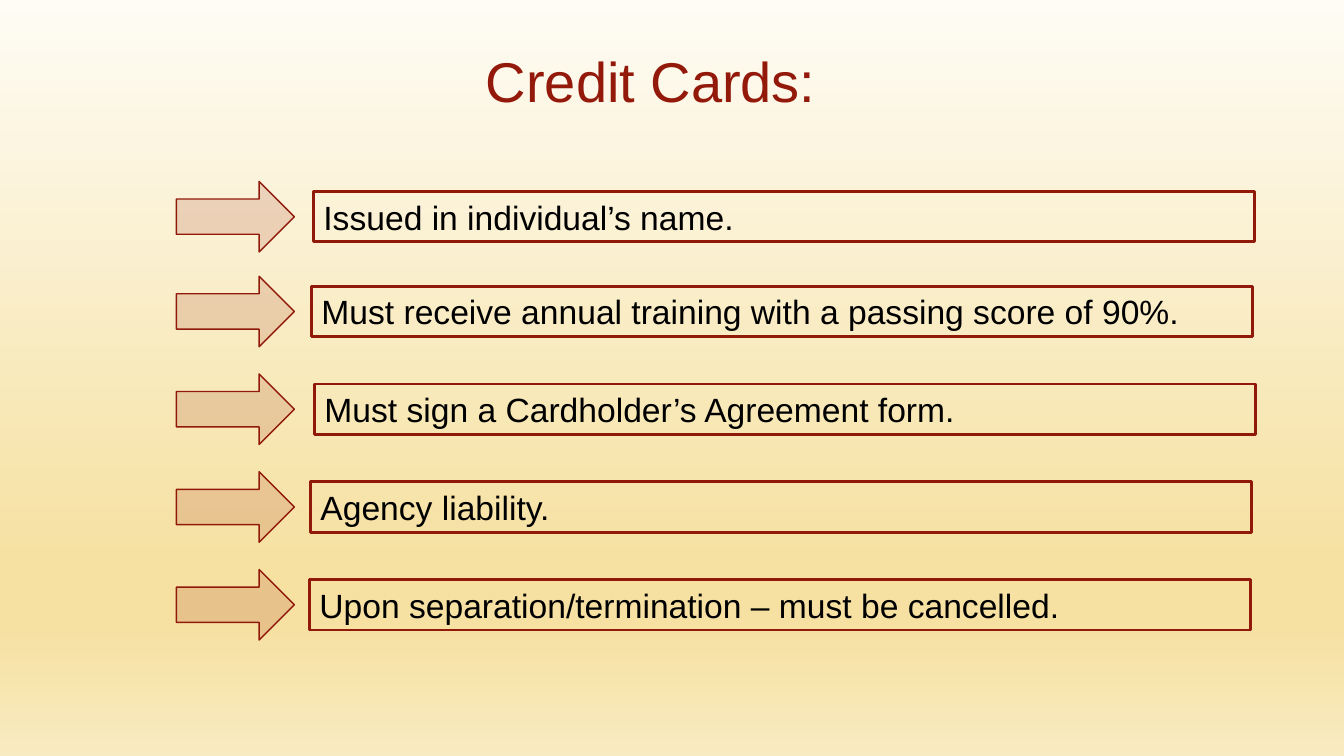
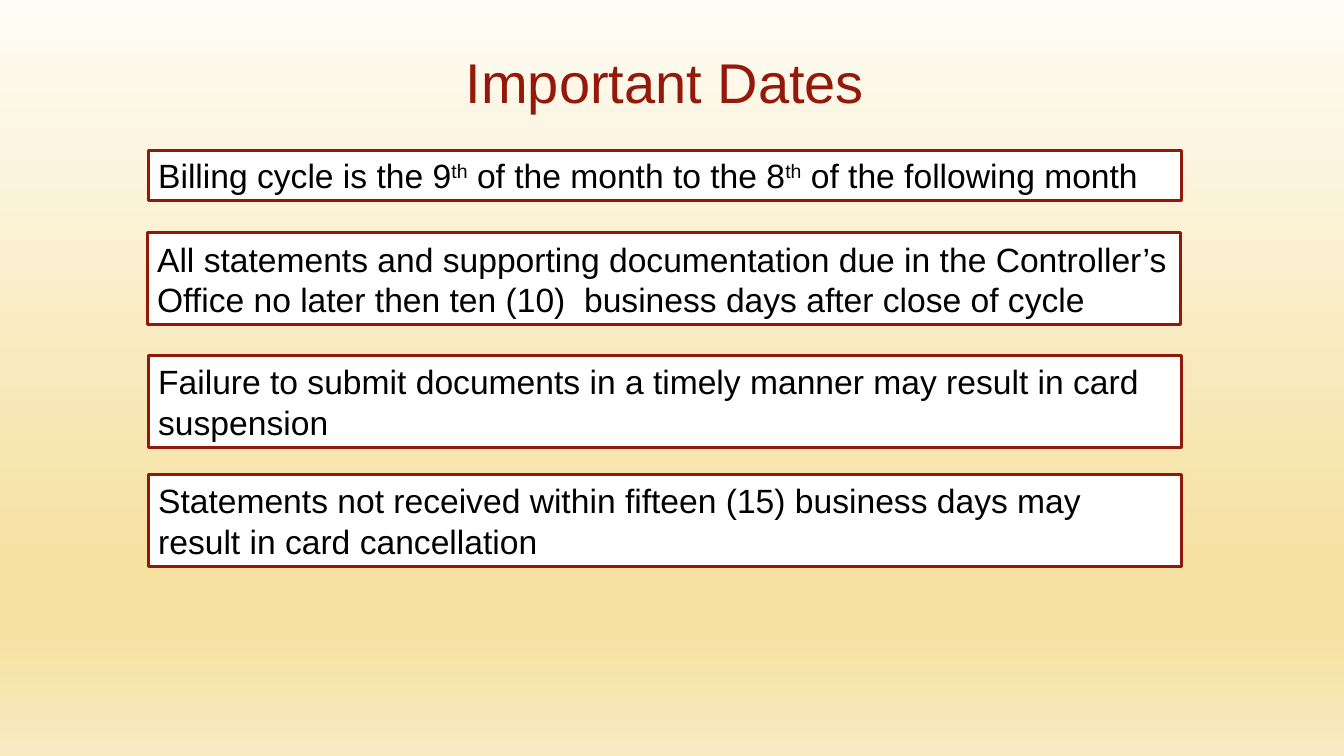
from lxml import etree
from pptx import Presentation
from pptx.dml.color import RGBColor
from pptx.enum import shapes, text
from pptx.oxml.ns import qn
from pptx.util import Inches, Pt


class Theme:
    font = "Arial"
    title_size = Pt(40)
    body_size = Pt(24)
    title = RGBColor.from_string("93190A")
    border = RGBColor.from_string("91190A")
    ink = RGBColor.from_string("000000")
    paper = RGBColor.from_string("FFFFFF")
    gradient = [(0, "FEFCF5"), (74, "F6E1A2"), (83, "F6E1A2"), (100, "F9EBC1")]
    arrow_opacity = 15


def add_titled_slide(title, left, top, width):
    s = prs.slides.add_slide(prs.slide_layouts[5])
    sp = s.shapes.title
    sp.left, sp.top = Inches(left), Inches(top)
    sp.width, sp.height = Inches(width), Inches(1.25)
    tf = sp.text_frame
    tf.auto_size = text.MSO_AUTO_SIZE.NONE
    tf.vertical_anchor = text.MSO_ANCHOR.MIDDLE
    p = tf.paragraphs[0]
    p.alignment = text.PP_ALIGN.CENTER
    p.line_spacing = 0.9
    r = p.add_run()
    r.text = title
    r.font.name, r.font.size = Theme.font, Theme.title_size
    r.font.color.rgb = Theme.title
    return s


def add_box(s, left, top, width, height, parts, fill=None):
    sp = s.shapes.add_shape(shapes.MSO_SHAPE.RECTANGLE, Inches(left), Inches(top),
                            Inches(width), Inches(height))
    sp.shadow.inherit = False
    if fill is None:
        sp.fill.background()
    else:
        sp.fill.solid()
        sp.fill.fore_color.rgb = fill
    sp.line.color.rgb, sp.line.width = Theme.border, Pt(2)
    tf = sp.text_frame
    tf.word_wrap = True
    tf.auto_size = text.MSO_AUTO_SIZE.SHAPE_TO_FIT_TEXT
    tf.vertical_anchor = text.MSO_ANCHOR.MIDDLE
    p = tf.paragraphs[0]
    p.alignment = text.PP_ALIGN.LEFT
    for part in parts:
        r = p.add_run()
        r.text = part
        r.font.name, r.font.size = Theme.font, Theme.body_size
        r.font.color.rgb = Theme.ink
        if part == "th":
            r.font._element.set("baseline", "30000")


prs = Presentation()
prs.slide_width, prs.slide_height = Inches(13.33), Inches(7.5)

master = prs.slide_master
fill = master.background.fill
fill.gradient()
fill.gradient_angle = 270
stops = master.element.find(".//" + qn("a:gsLst"))
for stop in list(stops):
    stops.remove(stop)
for position, color in Theme.gradient:
    stop = etree.SubElement(stops, qn("a:gs"), pos=str(position * 1000))
    etree.SubElement(stop, qn("a:srgbClr"), val=color)

s = add_titled_slide("Credit Cards:", 1.75, 0.21, 9.41)
card_rules = [
    (3.11, 1.8, "Issued in individual’s name."),
    (3.09, 2.74, "Must receive annual training with a passing score of 90%."),
    (3.12, 3.71, "Must sign a Cardholder’s Agreement form."),
    (3.08, 4.68, "Agency liability."),
    (3.07, 5.65, "Upon separation/termination – must be cancelled."),
]
for left, top, rule in card_rules:
    arrow = s.shapes.add_shape(shapes.MSO_SHAPE.RIGHT_ARROW, Inches(1.75), Inches(top),
                               Inches(1.17), Inches(0.7))
    arrow.shadow.inherit = False
    arrow.fill.solid()
    arrow.fill.fore_color.rgb = Theme.title
    color = arrow._element.spPr.find(qn("a:solidFill") + "/" + qn("a:srgbClr"))
    etree.SubElement(color, qn("a:alpha"), val=str(Theme.arrow_opacity * 1000))
    arrow.line.color.rgb, arrow.line.width = Theme.border, Pt(1)
    add_box(s, left, top + 0.1, 9.33, 0.5, [rule])

s = add_titled_slide("Important Dates", 0.93, 0.22, 11.33)
date_rules = [
    (1.47, 1.49, 0.5, ["Billing cycle is the 9", "th", " of the month to the 8", "th",
                       " of the following month"]),
    (1.46, 2.31, 0.91, ["All statements and supporting documentation due in the Controller’s "
                        "Office no later then ten (10)  business days after close of cycle"]),
    (1.47, 3.53, 0.91, ["Failure to submit documents in a timely manner may result in card "
                        "suspension"]),
    (1.47, 4.71, 0.91, ["Statements not received within fifteen (15) business days may "
                        "result in card cancellation"]),
]
for left, top, height, parts in date_rules:
    add_box(s, left, top, 10.25, height, parts, Theme.paper)

prs.save("out.pptx")
